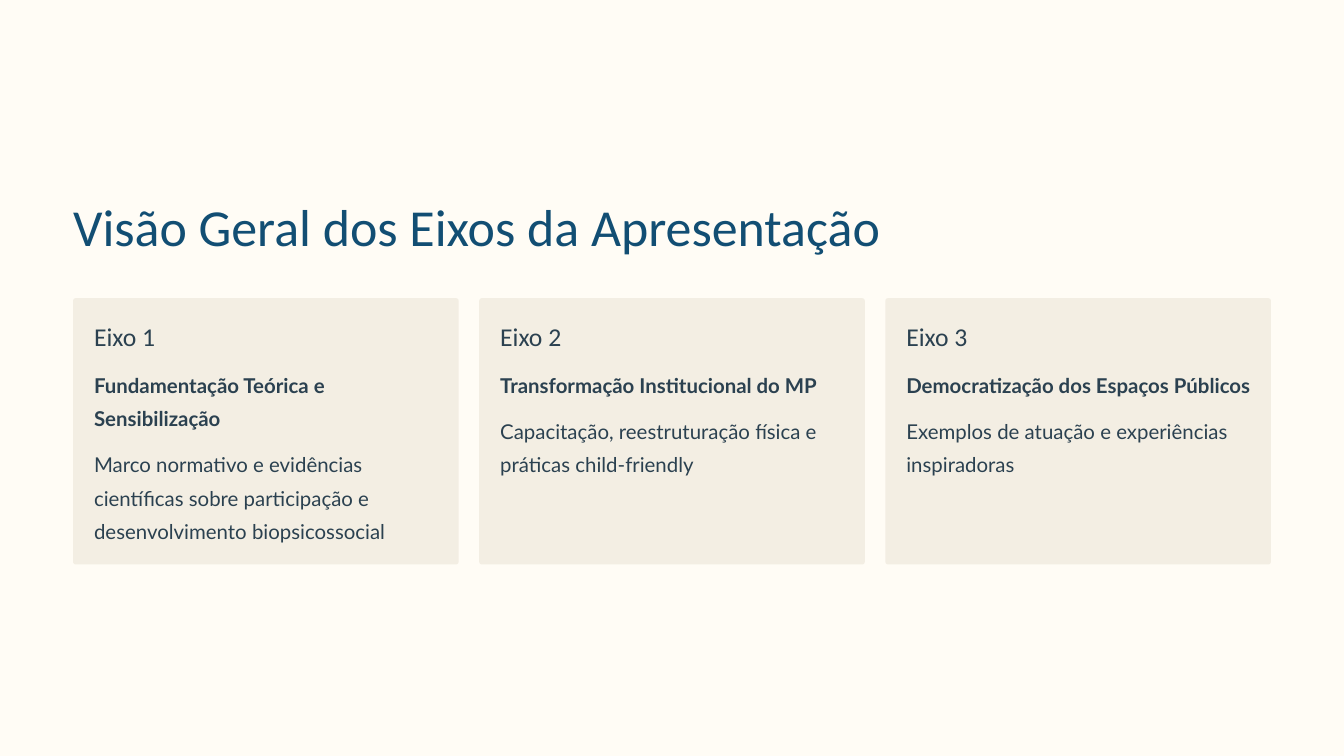
from pptx import Presentation
from pptx.dml.color import RGBColor
from pptx.enum.shapes import MSO_SHAPE
from pptx.enum.text import MSO_ANCHOR, PP_ALIGN
from pptx.util import Inches, Pt

COLORS = {"page": "FFFCF5", "card": "F3EEE3", "title": "124E73", "text": "2B4150"}

# Label, heading, heading line count, description, description line count
AXES = [
    ("Eixo 1", "Fundamentação Teórica e Sensibilização", 2,
     "Marco normativo e evidências científicas sobre participação e "
     "desenvolvimento biopsicossocial", 3),
    ("Eixo 2", "Transformação Institucional do MP", 1,
     "Capacitação, reestruturação física e práticas child-friendly", 2),
    ("Eixo 3", "Democratização dos Espaços Públicos", 1,
     "Exemplos de atuação e experiências inspiradoras", 2),
]

PAGE_WIDTH, PAGE_HEIGHT, MARGIN = 16, 9, 0.87
CARD_TOP, CARD_WIDTH, CARD_HEIGHT = 3.55, 4.59, 3.17
CARD_STEP = (PAGE_WIDTH - 2 * MARGIN - CARD_WIDTH) / (len(AXES) - 1)
PADDING, TEXT_WIDTH = 0.25, 4.2
HEADING_TOP, PARAGRAPH_GAP = 4.34, 0.15
LINE_POINTS = 28.5
LINE_HEIGHT = LINE_POINTS / 72


def paint(fill, color):
    fill.solid()
    fill.fore_color.rgb = RGBColor.from_string(COLORS[color])


def write(shape, text, font, size, spacing, color="text", bold=False):
    frame = shape.text_frame
    frame.text = text
    frame.word_wrap = True
    frame.vertical_anchor = MSO_ANCHOR.TOP
    frame.margin_left = frame.margin_right = 0
    frame.margin_top = frame.margin_bottom = 0
    para = frame.paragraphs[0]
    para.alignment = PP_ALIGN.LEFT
    para.line_spacing = Pt(spacing)
    para.space_before = Pt(0)
    span = para.runs[0]
    span.font.name = font
    span.font.size = Pt(size)
    span.font.bold = bold
    span.font.color.rgb = RGBColor.from_string(COLORS[color])


def add_text(page, left, top, width, height, text, *style, **options):
    box = page.shapes.add_textbox(
        Inches(left), Inches(top), Inches(width), Inches(height))
    write(box, text, *style, **options)


def add_title(page, text):
    title = page.shapes.title
    title.left, title.top = Inches(MARGIN), Inches(2.29)
    title.width, title.height = Inches(11.76), Inches(0.78)
    write(title, text, "Calibri", 44.5, 55.5, color="title")


def add_card(page, left, label, heading, heading_lines, description, description_lines):
    card = page.shapes.add_shape(
        MSO_SHAPE.ROUNDED_RECTANGLE, Inches(left), Inches(CARD_TOP),
        Inches(CARD_WIDTH), Inches(CARD_HEIGHT))
    card.adjustments[0] = 0.01
    card.shadow.inherit = False
    paint(card.fill, "card")
    card.line.fill.background()

    # Label, then heading, then description below it
    text_left = left + PADDING
    add_text(page, text_left, CARD_TOP + PADDING, 3.1, 0.39, label, "Calibri", 22, 27.5)
    heading_height = heading_lines * LINE_HEIGHT
    add_text(page, text_left, HEADING_TOP, TEXT_WIDTH, heading_height,
             heading, "Lato", 17.5, LINE_POINTS, bold=True)
    add_text(page, text_left, HEADING_TOP + heading_height + PARAGRAPH_GAP,
             TEXT_WIDTH, description_lines * LINE_HEIGHT,
             description, "Lato", 17.5, LINE_POINTS)


def main():
    deck = Presentation()
    deck.slide_width, deck.slide_height = Inches(PAGE_WIDTH), Inches(PAGE_HEIGHT)
    page = deck.slides.add_slide(deck.slide_layouts.get_by_name("Title Only"))
    paint(page.background.fill, "page")

    add_title(page, "Visão Geral dos Eixos da Apresentação")

    # Three equal cards in a row
    for index, axis in enumerate(AXES):
        add_card(page, MARGIN + index * CARD_STEP, *axis)

    deck.save("out.pptx")


if __name__ == "__main__":
    main()
